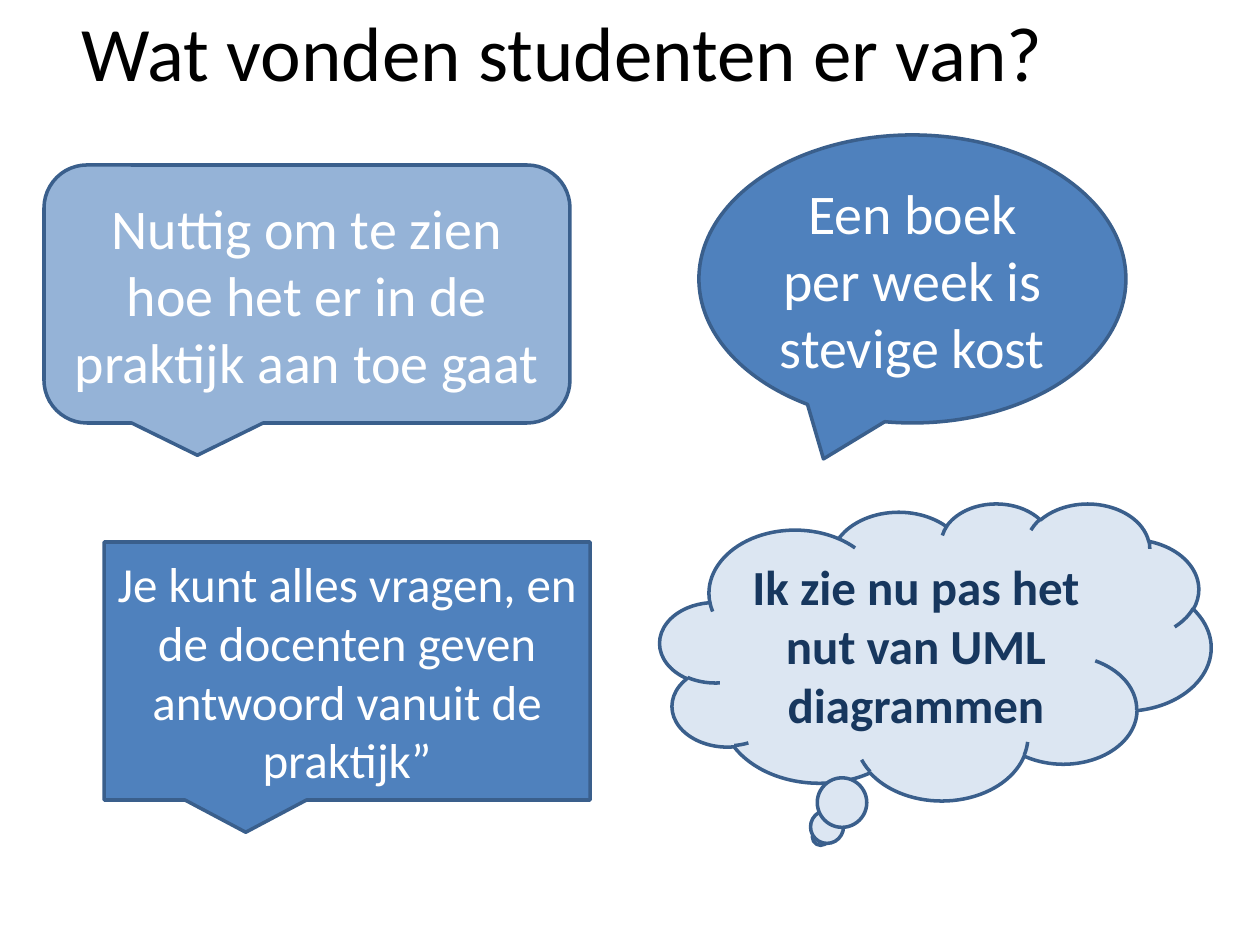
from pptx import Presentation
from pptx.dml.color import RGBColor
from pptx.enum.shapes import MSO_SHAPE as Shape
from pptx.enum.text import MSO_ANCHOR as Anchor, MSO_AUTO_SIZE as AutoSize, PP_ALIGN as Align
from pptx.util import Emu, Pt

PX_PER_INCH = 126
FONT = "Calibri"
OUTLINE = "3A5F8C"
BLUE = "4F81BD"
WHITE = "FFFFFF"

CALLOUTS = [
    (Shape.ROUNDED_RECTANGULAR_CALLOUT, (44, 165, 526, 258), "95B3D7",
     "Nuttig om te zien hoe het er in de praktijk aan toe gaat",
     {"size": Pt(32)}, WHITE),
    (Shape.OVAL_CALLOUT, (699, 135, 427, 288), BLUE,
     "Een boek per week is stevige kost",
     {"size": Pt(32)}, WHITE),
    (Shape.CLOUD_CALLOUT, (660, 503, 551, 297), "DCE6F2",
     "Ik zie nu pas het nut van UML diagrammen",
     {"size": Pt(28), "bold": True}, "17375E"),
    (Shape.RECTANGULAR_CALLOUT, (104, 542, 486, 258), BLUE,
     "Je kunt alles vragen, en de docenten geven antwoord vanuit de praktijk”",
     {"size": Pt(28)}, WHITE),
]


def px(length):
    return Emu(round(length * 914400 / PX_PER_INCH))


def color(value):
    return RGBColor.from_string(value)


def set_attributes(target, values):
    for name, value in values.items():
        setattr(target, name, value)


def write_text(box, text, align, font_format, text_color):
    frame = box.text_frame
    set_attributes(frame, {"word_wrap": True, "auto_size": AutoSize.NONE,
                           "vertical_anchor": Anchor.MIDDLE})
    para = frame.paragraphs[0]
    para.alignment = align
    span = para.add_run()
    span.text = text
    set_attributes(span.font, {"name": FONT, **font_format})
    span.font.color.rgb = color(text_color)


def add_title(page, text, bounds):
    title = page.shapes.title
    set_attributes(title, dict(zip(("left", "top", "width", "height"), map(px, bounds))))
    write_text(title, text, Align.LEFT, {"size": Pt(44)}, "000000")


def add_callout(page, kind, bounds, fill, text, font_format, text_color):
    callout = page.shapes.add_shape(kind, *map(px, bounds))
    callout.shadow.inherit = False
    callout.fill.solid()
    callout.fill.fore_color.rgb = color(fill)
    callout.line.color.rgb = color(OUTLINE)
    callout.line.width = Pt(2)
    write_text(callout, text, Align.CENTER, font_format, text_color)


def main():
    deck = Presentation()
    set_attributes(deck, {"slide_width": px(1260), "slide_height": px(945)})
    page = deck.slides.add_slide(deck.slide_layouts.get_by_name("Title Only"))
    add_title(page, "Wat vonden studenten er van?", (69, 10, 1134, 81))
    for callout in CALLOUTS:
        add_callout(page, *callout)
    deck.save("out.pptx")


if __name__ == "__main__":
    main()
